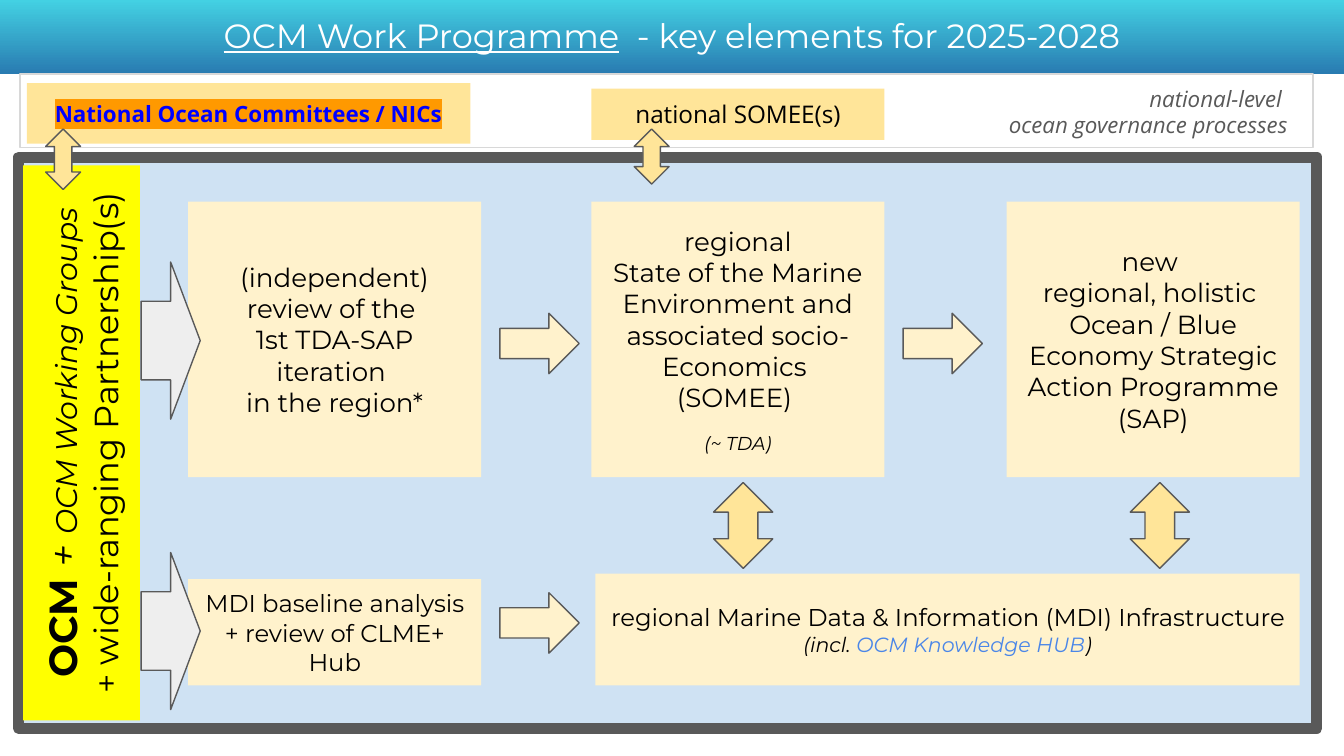
from lxml.etree import SubElement
from pptx import Presentation
from pptx.dml.color import RGBColor
from pptx.enum.shapes import MSO_SHAPE
from pptx.enum.text import MSO_ANCHOR, MSO_AUTO_SIZE, PP_ALIGN
from pptx.oxml.ns import qn
from pptx.util import Pt

WHITE = RGBColor(0xFF, 0xFF, 0xFF)
BLACK = RGBColor(0x00, 0x00, 0x00)
GREY = RGBColor(0x59, 0x59, 0x59)
LIGHT_GREY = RGBColor(0xD8, 0xD8, 0xD8)
PALE_GREY = RGBColor(0xEE, 0xEE, 0xEE)
CREAM = RGBColor(0xFF, 0xF2, 0xCC)
SAND = RGBColor(0xFF, 0xE5, 0x99)
YELLOW = RGBColor(0xFF, 0xFF, 0x00)
ORANGE = RGBColor(0xFF, 0x99, 0x00)
PALE_BLUE = RGBColor(0xCF, 0xE2, 0xF3)
LINK_BLUE = RGBColor(0x4A, 0x86, 0xE8)
STRONG_BLUE = RGBColor(0x00, 0x00, 0xFF)
TURQUOISE = RGBColor(0x43, 0xD1, 0xE3)
OCEAN_BLUE = RGBColor(0x29, 0x7B, 0xB1)

REVIEW_X, SOMEE_X, SAP_X = 100.8, 316.8, 539.3
BOX_WIDTH = 157
STAGE_Y, STAGE_HEIGHT = 108, 147.6


def add_block(page, bounds, fill=None, line=None, weight=0.75, kind=MSO_SHAPE.RECTANGLE):
    block = page.shapes.add_shape(kind, *[Pt(length) for length in bounds])
    block.shadow.inherit = False
    if fill is None:
        block.fill.background()
    else:
        block.fill.solid()
        block.fill.fore_color.rgb = fill
    if line is None:
        block.line.fill.background()
    else:
        block.line.color.rgb = line
        block.line.width = Pt(weight)
    return block


def add_arrow(page, bounds, fill, kind=MSO_SHAPE.RIGHT_ARROW):
    add_block(page, bounds, fill, GREY, kind=kind)


def add_header_band(page):
    band = add_block(page, (0, 0, 720, 39.6))
    band.fill.gradient()
    band.fill.gradient_angle = 270
    for stop, color in zip(band.fill.gradient_stops, (TURQUOISE, OCEAN_BLUE)):
        stop.color.rgb = color
    return band


def write(frame, lines, size, font="Montserrat", color=BLACK, align=PP_ALIGN.CENTER,
          anchor=MSO_ANCHOR.MIDDLE):
    """Fill the frame; a line is a list of (text, style) spans, style overriding the defaults."""
    frame.word_wrap = True
    frame.auto_size = MSO_AUTO_SIZE.NONE
    frame.vertical_anchor = anchor
    frame.margin_left = frame.margin_right = frame.margin_top = frame.margin_bottom = Pt(7.2)
    for index, line in enumerate(lines):
        paragraph = frame.add_paragraph() if index else frame.paragraphs[0]
        paragraph.alignment = align
        for text, style in line:
            span = paragraph.add_run()
            span.text = text
            span.font.name = font
            span.font.size = Pt(style.get("size", size))
            span.font.color.rgb = style.get("color", color)
            span.font.bold = style.get("bold", False)
            span.font.italic = style.get("italic", False)
            span.font.underline = style.get("underline", False)


def plain(*texts):
    return [[(text, {})] for text in texts]


def highlight(span, color):
    properties = span.font._element
    mark = SubElement(properties, qn("a:highlight"))
    SubElement(mark, qn("a:srgbClr")).set("val", str(color))
    properties.find(qn("a:solidFill")).addnext(mark)


def add_title(page, band):
    title = page.shapes.title
    title.left, title.top, title.width, title.height = Pt(24.5), Pt(0.7), Pt(671), Pt(45.4)
    write(title.text_frame, [[("OCM Work Programme", {"underline": True}),
                              ("  - key elements for 2025-2028", {})]],
          18, color=WHITE, anchor=MSO_ANCHOR.TOP)
    band.element.addnext(title.element)  # keeps the title in front of the band


def add_national_level(page):
    committees = add_block(page, (14.4, 44.6, 237.6, 32.4), SAND)
    write(committees.text_frame, [[("National Ocean Committees / NICs", {"bold": True})]],
          12, "Open Sans", STRONG_BLUE)
    highlight(committees.text_frame.paragraphs[0].runs[0], ORANGE)

    national_somee = add_block(page, (SOMEE_X, 47.5, BOX_WIDTH, 27.4), SAND)
    write(national_somee.text_frame, plain("national SOMEE(s)"), 13, "Open Sans")

    label = page.shapes.add_textbox(Pt(491), Pt(38.2), Pt(206), Pt(20))
    write(label.text_frame, [[("national-level ", {"italic": True})],
                             [("ocean governance processes", {"italic": True})]],
          12, "Open Sans", GREY, PP_ALIGN.RIGHT, MSO_ANCHOR.TOP)


def add_partnership_bar(page):
    bar = add_block(page, (-105, 206, 297.4, 62.6), YELLOW)
    bar.rotation = 270
    write(bar.text_frame, [
        [("OCM ", {"size": 21, "bold": True}), ("+ ", {"size": 21, "italic": True}),
         ("OCM Working Groups", {"size": 16, "italic": True})],
        [("+ wide-ranging Partnership(s)", {})],
    ], 18)


def add_stages(page):
    stages = [
        (REVIEW_X, plain("(independent) review of the ", "1st TDA-SAP iteration ",
                         "in the region*")),
        (SOMEE_X, plain("regional",
                        "State of the Marine Environment and associated socio-Economics ",
                        "(SOMEE) ") + [[("(~ TDA)", {"size": 10, "italic": True})]]),
        (SAP_X, plain("new ", "regional, holistic ",
                      "Ocean / Blue Economy Strategic Action Programme (SAP)")),
    ]
    for left, lines in stages:
        stage = add_block(page, (left, STAGE_Y, BOX_WIDTH, STAGE_HEIGHT), CREAM)
        write(stage.text_frame, lines, 14)
        if left == SOMEE_X:
            stage.text_frame.paragraphs[-1].space_before = Pt(9.75)


def add_data_row(page):
    baseline = add_block(page, (REVIEW_X, 310.3, BOX_WIDTH, 56.9), CREAM)
    write(baseline.text_frame, plain("MDI baseline analysis + review of CLME+ Hub"), 13)

    infrastructure = add_block(page, (319, 307.4, 377.3, 59.8), CREAM)
    note = {"size": 11, "italic": True}
    write(infrastructure.text_frame, plain(
        "regional Marine Data & Information (MDI) Infrastructure ") + [
        [("(incl. ", note), ("OCM Knowledge HUB", {**note, "color": LINK_BLUE}), (")", note)],
    ], 13)


def add_arrows(page):
    for left, top in ((267.8, 167.8), (483.8, 167.8), (267.8, 317.5)):
        add_arrow(page, (left, top, 42.5, 32.4), CREAM)
    for top in (140.4, 296):
        add_arrow(page, (75.6, top, 31.7, 84.2), PALE_GREY)
    for bounds in ((382.3, 258.5, 31.7, 46), (605.5, 258.5, 31.7, 46),
                   (339.8, 69.1, 18.7, 29.5), (24.5, 69.1, 18.7, 32.4)):
        add_arrow(page, bounds, SAND, MSO_SHAPE.UP_DOWN_ARROW)


def main():
    deck = Presentation()
    deck.slide_width, deck.slide_height = Pt(720), Pt(405)
    page = deck.slides.add_slide(deck.slide_layouts[5])
    band = add_header_band(page)
    add_title(page, band)
    add_block(page, (10.8, 39.6, 692.6, 39.6), line=LIGHT_GREY)
    add_block(page, (10, 84.2, 695.5, 306), PALE_BLUE, GREY, 6)
    add_national_level(page)
    add_partnership_bar(page)
    add_stages(page)
    add_data_row(page)
    add_arrows(page)
    deck.save("out.pptx")


if __name__ == "__main__":
    main()
